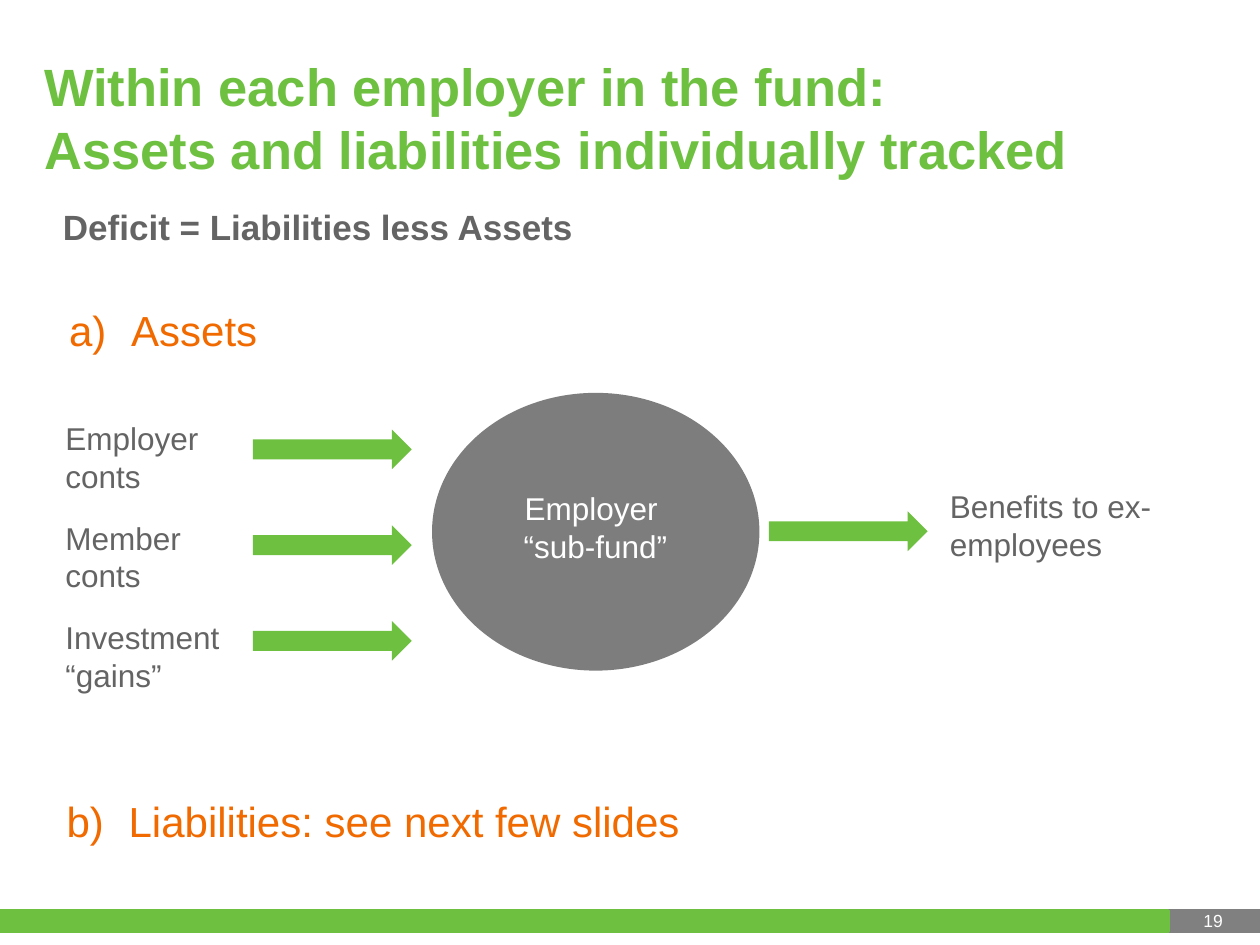
from dataclasses import dataclass

from pptx import Presentation
from pptx.dml.color import RGBColor
from pptx.enum.shapes import MSO_SHAPE as Shp
from pptx.enum.text import MSO_ANCHOR as Anchor, MSO_AUTO_SIZE as Auto, PP_ALIGN as Align
from pptx.oxml.ns import qn
from pptx.util import Cm, Pt

GREEN = RGBColor(0x6E, 0xC0, 0x40)
ORANGE = RGBColor(0xF0, 0x6A, 0x00)
TEXT_GREY = RGBColor(0x64, 0x64, 0x64)
FUND_GREY = RGBColor(0x7D, 0x7D, 0x7D)
FOOTER_GREY = RGBColor(0x80, 0x80, 0x80)
WHITE = RGBColor(0xFF, 0xFF, 0xFF)
HANGING = Cm(1.25)


@dataclass
class Box:
    left: float
    top: float
    width: float
    height: float

    def lengths(self) -> tuple:
        return Cm(self.left), Cm(self.top), Cm(self.width), Cm(self.height)


@dataclass
class Style:
    size: float
    color: RGBColor
    bold: bool = False
    align: Align = Align.LEFT
    anchor: Anchor = Anchor.TOP
    hanging: bool = False


@dataclass
class Flow:
    label: str
    label_box: Box
    arrow_box: Box


LABEL = Style(18, TEXT_GREY)
HEADING = Style(24, ORANGE, hanging=True)


def write(sp, text: str, style: Style) -> None:
    """Fill a text shape with one paragraph, one run per line."""
    tf = sp.text_frame
    tf.word_wrap = True
    tf.auto_size = Auto.NONE
    tf.vertical_anchor = style.anchor
    p = tf.paragraphs[0]
    p.alignment = style.align
    p.space_before = Pt(0)
    if style.hanging:
        pPr = p._p.get_or_add_pPr()
        pPr.set("marL", str(HANGING))
        pPr.set("indent", str(-HANGING))
        pPr.append(pPr.makeelement(qn("a:buNone"), {}))
    for i, line in enumerate(text.split("\n")):
        if i:
            p.add_line_break()
        r = p.add_run()
        r.text = line
        r.font.name = "Arial"
        r.font.size = Pt(style.size)
        r.font.bold = style.bold
        r.font.color.rgb = style.color


def add_text(slide, box: Box, text: str, style: Style) -> None:
    write(slide.shapes.add_textbox(*box.lengths()), text, style)


def fill_placeholder(slide, idx: int, box: Box, text: str, style: Style) -> None:
    sp = slide.placeholders[idx]
    sp.left, sp.top, sp.width, sp.height = box.lengths()
    write(sp, text, style)


def add_filled(slide, kind: Shp, box: Box, color: RGBColor, line_pt: float = 0) -> None:
    sp = slide.shapes.add_shape(kind, *box.lengths())
    sp.shadow.inherit = False
    sp.fill.solid()
    sp.fill.fore_color.rgb = color
    if line_pt:
        sp.line.color.rgb = color
        sp.line.width = Pt(line_pt)
    else:
        sp.line.fill.background()


def main() -> None:
    prs = Presentation()
    prs.slide_width, prs.slide_height = Cm(25.4), Cm(19.05)
    slide = prs.slides.add_slide(prs.slide_layouts.get_by_name("Two Content"))

    # Footer bars and page number
    add_filled(slide, Shp.RECTANGLE, Box(23.29, 18.36, 2.11, 0.41), FOOTER_GREY, 2)
    add_filled(slide, Shp.RECTANGLE, Box(0, 18.36, 23.55, 0.41), GREEN, 2)
    add_text(slide, Box(23.27, 17.4, 1.63, 1.5), "19",
             Style(10, WHITE, align=Align.RIGHT, anchor=Anchor.BOTTOM))

    # Title and the two lettered headings
    fill_placeholder(slide, 0, Box(0.64, 0.76, 22.86, 3.18),
                     "Within each employer in the fund:\n"
                     "Assets and liabilities individually tracked",
                     Style(30, GREEN, bold=True, anchor=Anchor.MIDDLE))
    fill_placeholder(slide, 1, Box(1.14, 6.02, 5.8, 1.28), "a) \tAssets", HEADING)
    fill_placeholder(slide, 2, Box(1.09, 15.9, 13.2, 1.28),
                     "b) \tLiabilities: see next few slides", HEADING)
    add_text(slide, Box(1.02, 4.01, 13.2, 1.12), "Deficit = Liabilities less Assets",
             Style(20, TEXT_GREY, bold=True, hanging=True))

    # Employer sub-fund
    add_filled(slide, Shp.OVAL, Box(8.71, 7.92, 6.6, 5.6), FUND_GREY)
    add_text(slide, Box(9.91, 9.73, 4.19, 1.8), "Employer \n“sub-fund”",
             Style(18, WHITE, align=Align.CENTER))

    # Money flowing in (evenly spaced rows) and out
    sources = ["Employer conts", "Member conts", "Investment “gains”"]
    flows = [Flow(label, Box(1.07, 8.33 + 2 * i, 4, 1.8), Box(5.1, 8.66 + 1.93 * i, 3.2, 0.8))
             for i, label in enumerate(sources)]
    flows.append(Flow("Benefits to ex-employees",
                      Box(18.9, 9.7, 5.9, 1.8), Box(15.5, 10.31, 3.2, 0.8)))
    for flow in flows:
        add_filled(slide, Shp.RIGHT_ARROW, flow.arrow_box, GREEN)
        add_text(slide, flow.label_box, flow.label, LABEL)

    prs.save("out.pptx")


if __name__ == "__main__":
    main()
